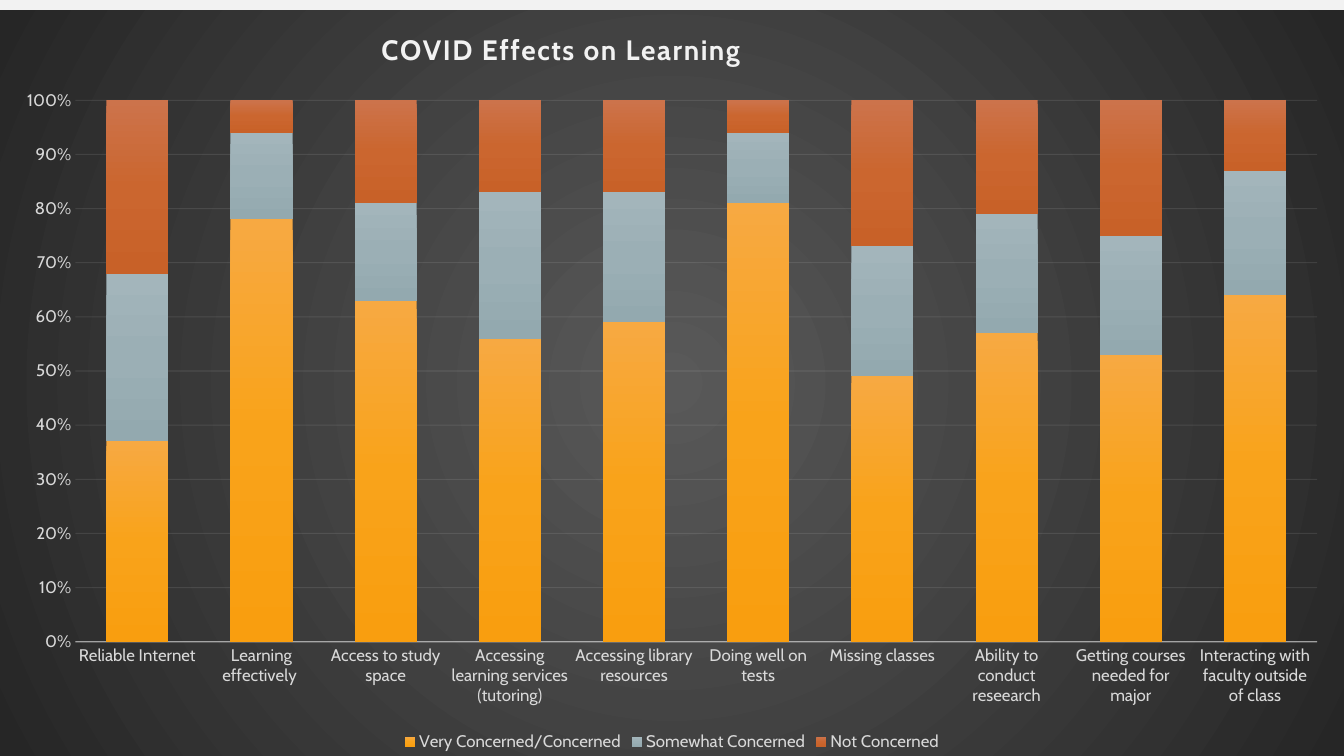
from lxml import etree
from pptx import Presentation
from pptx.chart.data import CategoryChartData
from pptx.dml.color import RGBColor
from pptx.enum.chart import XL_CHART_TYPE as ChartType
from pptx.enum.chart import XL_LEGEND_POSITION as LegendPosition
from pptx.enum.chart import XL_TICK_MARK as TickMark
from pptx.oxml import parse_xml
from pptx.oxml.ns import nsdecls, qn
from pptx.util import Inches, Pt

FONT = "Cabin"
PALE = RGBColor(0xF2, 0xF2, 0xF2)
LABEL_GREY = RGBColor(0xD9, 0xD9, 0xD9)
CHARCOAL = ((0, RGBColor(0x59, 0x59, 0x59)), (100, RGBColor(0x26, 0x26, 0x26)))
AMBER = ((0, RGBColor(0xF7, 0xA9, 0x42)), (50, RGBColor(0xF9, 0xA3, 0x1A)),
         (100, RGBColor(0xF9, 0x9E, 0x0F)))
BLUE_GREY = ((0, RGBColor(0xA3, 0xB5, 0xBB)), (50, RGBColor(0x9B, 0xAF, 0xB5)),
             (100, RGBColor(0x93, 0xA9, 0xAF)))
RUST = ((0, RGBColor(0xCC, 0x73, 0x4B)), (50, RGBColor(0xCB, 0x66, 0x2F)),
        (100, RGBColor(0xC8, 0x61, 0x28)))

CONCERNS = [
    "Reliable Internet", "Learning effectively ", "Access to study space",
    "Accessing learning services (tutoring)", "Accessing library resources",
    "Doing well on tests", "Missing classes", "Ability to conduct reseearch",
    "Getting courses needed for major",
    "Interacting with faculty outside of class",
]
ANSWERS = [
    ("Very Concerned/Concerned", (37, 78, 63, 56, 59, 81, 49, 57, 53, 64), AMBER),
    ("Somewhat Concerned", (31, 16, 18, 27, 24, 13, 24, 22, 22, 23), BLUE_GREY),
    ("Not Concerned", (32, 6, 19, 17, 17, 6, 27, 21, 25, 13), RUST),
]


def write_text(frame, text, size, color, bold=False, spacing=0):
    frame.text = text
    run = frame.paragraphs[0].runs[0]
    run.font.name, run.font.size, run.font.bold = FONT, Pt(size), bold
    run.font.color.rgb = color
    run.font._element.set("spc", str(spacing * 100))


def gradient(stops, direction):
    marks = "".join(f'<a:gs pos="{position * 1000}"><a:srgbClr val="{color}"/></a:gs>'
                    for position, color in stops)
    return parse_xml(f'<a:gradFill {nsdecls("a")} rotWithShape="1">'
                     f"<a:gsLst>{marks}</a:gsLst>{direction}</a:gradFill>")


# Slide
deck = Presentation()
deck.slide_width, deck.slide_height = Inches(13.33), Inches(7.5)
slide = deck.slides.add_slide(deck.slide_layouts[6])
slide.background.fill.solid()
slide.background.fill.fore_color.rgb = PALE

# Chart data
survey = CategoryChartData()
survey.categories = CONCERNS
for answer, shares, _ in ANSWERS:
    survey.add_series(answer, shares)
chart = slide.shapes.add_chart(
    ChartType.COLUMN_STACKED_100, Inches(0), Inches(0.1),
    Inches(13.33), Inches(7.4), survey).chart
chart.font.name, chart.font.size = FONT, Pt(10)

# Columns
columns = chart.plots[0]
columns.gap_width, columns.overlap = 100, 100
columns.vary_by_categories = False
for series, (_, _, stops) in zip(columns.series, ANSWERS):
    series.format.line.fill.background()
    series.format._element.get_or_add_spPr().insert(
        0, gradient(stops, '<a:lin ang="5400000" scaled="0"/>'))

# Dark backdrop
backdrop = parse_xml(f'<c:spPr {nsdecls("c", "a")}><a:ln><a:noFill/></a:ln></c:spPr>')
backdrop.insert(0, gradient(
    CHARCOAL, '<a:path path="circle"><a:fillToRect l="50000" t="50000" '
              'r="50000" b="50000"/></a:path>'))
chart._chartSpace.find(qn("c:chart")).addnext(backdrop)

# Title
chart.has_title = True
chart.chart_title.include_in_layout = False
write_text(chart.chart_title.text_frame, "COVID Effects on Learning",
           size=20, color=PALE, bold=True, spacing=1)

# Legend
chart.has_legend = True
chart.legend.position = LegendPosition.BOTTOM
chart.legend.include_in_layout = False

# Axes and gridlines
concern_axis, share_axis = chart.category_axis, chart.value_axis
for axis in (concern_axis, share_axis):
    axis.major_tick_mark = axis.minor_tick_mark = TickMark.NONE
for part in (concern_axis.tick_labels, share_axis.tick_labels, chart.legend):
    part.font.name, part.font.size = FONT, Pt(12)
    part.font.color.rgb = LABEL_GREY
share_axis.tick_labels.number_format = "0%"
share_axis.tick_labels.number_format_is_linked = False
share_axis.major_unit = 0.1
share_axis.format.line.fill.background()
concern_axis.has_major_gridlines = False
share_axis.has_major_gridlines = True
gridlines = share_axis.major_gridlines
for rule, width, opacity in ((concern_axis, 1, 54), (gridlines, 0.75, 10)):
    rule.format.line.width = Pt(width)
    rule.format.line.color.rgb = PALE
    color = rule.format.line._ln.find(".//" + qn("a:srgbClr"))
    etree.SubElement(color, qn("a:alpha")).set("val", str(opacity * 1000))

# Places of the title and the plot, as shares of the chart
title_place = {"xMode": "edge", "yMode": "edge", "x": 0.28, "y": 0.02}
plot_place = {"layoutTarget": "inner", "xMode": "edge", "yMode": "edge",
              "x": 0.056, "y": 0.121, "w": 0.924, "h": 0.726}
for owner, place in (("c:title", title_place), ("c:plotArea", plot_place)):
    element = chart._chartSpace.find(f".//{qn(owner)}")
    layout = element.find(qn("c:layout"))
    if layout is None:
        layout = etree.Element(qn("c:layout"))
        element.insert(1 if owner == "c:title" else 0, layout)
    manual = etree.SubElement(layout, qn("c:manualLayout"))
    for key, value in place.items():
        etree.SubElement(manual, qn(f"c:{key}")).set("val", str(value))

deck.save("out.pptx")
